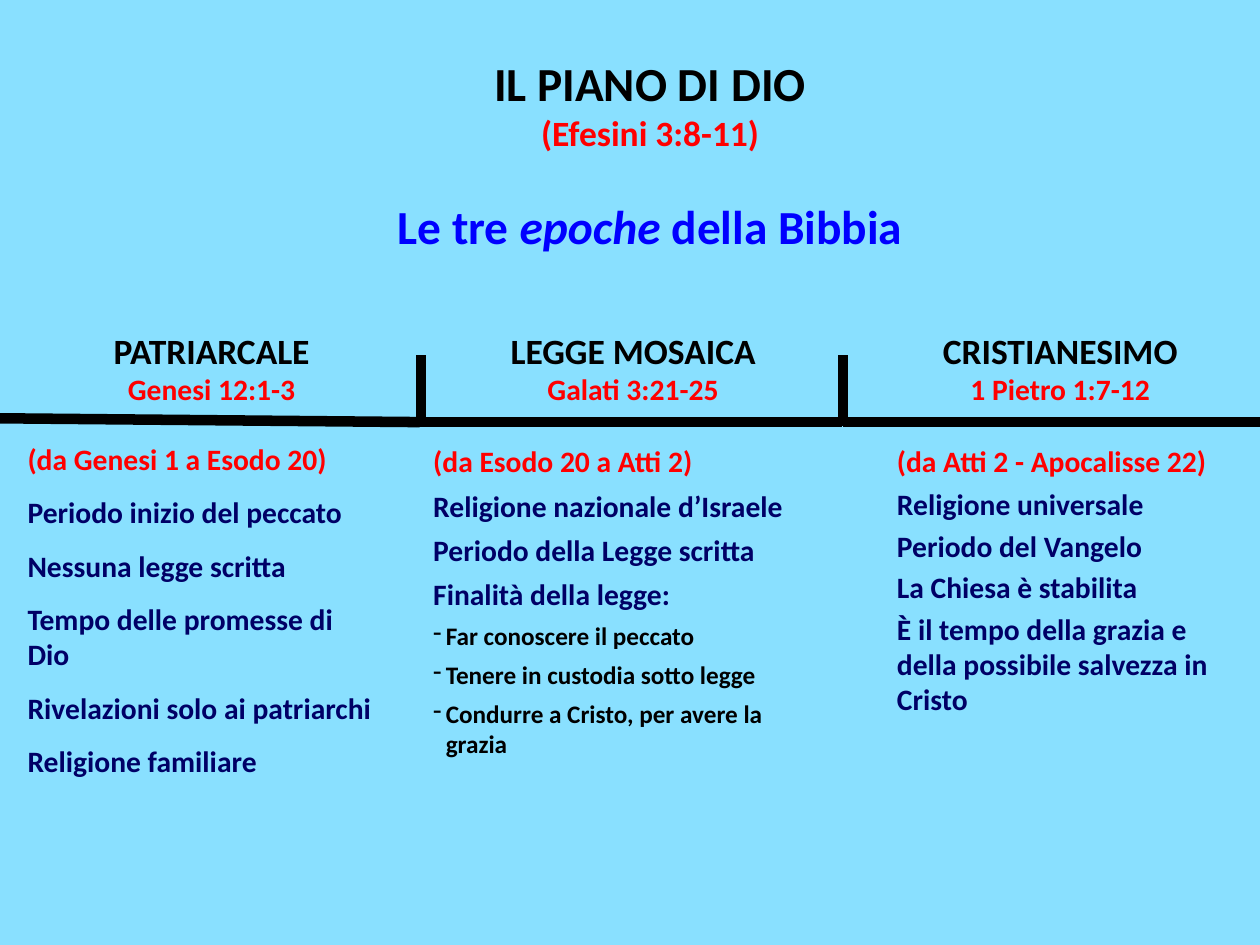
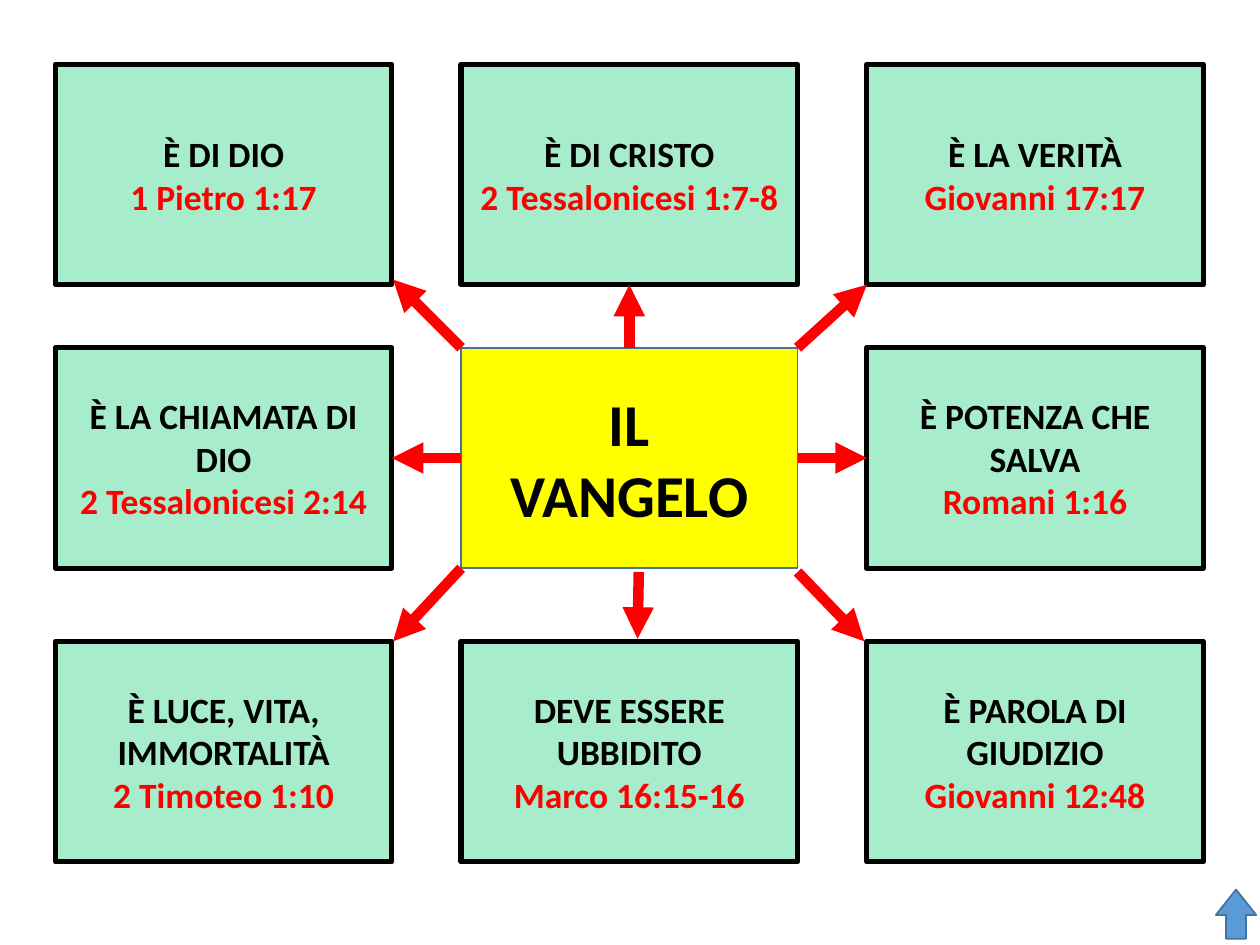
from lxml import etree
from pptx import Presentation
from pptx.dml.color import RGBColor
from pptx.enum.shapes import MSO_CONNECTOR, MSO_SHAPE
from pptx.enum.text import MSO_ANCHOR, MSO_AUTO_SIZE, PP_ALIGN
from pptx.oxml.ns import qn
from pptx.util import Inches, Pt

LEFT, CENTER = PP_ALIGN.LEFT, PP_ALIGN.CENTER
TOP, MIDDLE = MSO_ANCHOR.TOP, MSO_ANCHOR.MIDDLE
NO_FIT = MSO_AUTO_SIZE.NONE
RECTANGLE, UP_ARROW = MSO_SHAPE.RECTANGLE, MSO_SHAPE.UP_ARROW
STRAIGHT = MSO_CONNECTOR.STRAIGHT

SKY = RGBColor(0x89, 0xE0, 0xFF)
WHITE = RGBColor(0xFF, 0xFF, 0xFF)
BLACK = RGBColor(0x00, 0x00, 0x00)
RED = RGBColor(0xFF, 0x00, 0x00)
BLUE = RGBColor(0x00, 0x00, 0xFF)
NAVY = RGBColor(0x00, 0x00, 0x66)
MINT = RGBColor(0xA7, 0xED, 0xCC)
YELLOW = RGBColor(0xFF, 0xFF, 0x00)
STEEL = RGBColor(0x43, 0x73, 0x9E)
ARROW_BLUE = RGBColor(0x5B, 0x9B, 0xD5)

FONT = "Calibri"
HUGE, LARGE, MEDIUM, BODY, SMALL = 33.9, 27.1, 20.3, 16.9, 14.4
TITLE_ONLY, BLANK = 5, 6
SIDE_TOP, SIDE_LEFT, SIDE_BOTTOM, SIDE_RIGHT = range(4)


def write(frame, text, size=MEDIUM, color=BLACK, italic=False, align=LEFT,
          before=0, after=0, dash=False, same_line=False):
    """Add text as a new paragraph, or as a further run of the last one."""
    paragraph = frame.paragraphs[-1]
    if not same_line:
        if paragraph.runs:
            paragraph = frame.add_paragraph()
        paragraph.alignment = align
        paragraph.space_before, paragraph.space_after = Pt(before), Pt(after)
        if dash:
            properties = paragraph._p.get_or_add_pPr()
            properties.set("marL", str(Inches(0.1)))
            properties.set("indent", str(Inches(-0.1)))
            etree.SubElement(properties, qn("a:buChar")).set("char", "-")
    run = paragraph.add_run()
    run.text = text
    font = run.font
    font.name, font.size, font.bold, font.italic = FONT, Pt(size), True, italic
    font.color.rgb = color


class Deck:
    def __init__(self):
        self.presentation = Presentation()
        self.presentation.slide_width = Inches(10)
        self.presentation.slide_height = Inches(7.5)
        self.slide = None

    def new_slide(self, layout, background):
        self.slide = self.presentation.slides.add_slide(
            self.presentation.slide_layouts[layout])
        self.slide.background.fill.solid()
        self.slide.background.fill.fore_color.rgb = background

    def title(self, left, top, width, height):
        holder = self.slide.shapes.title
        holder.left, holder.top = Inches(left), Inches(top)
        holder.width, holder.height = Inches(width), Inches(height)
        frame = holder.text_frame
        frame.auto_size, frame.vertical_anchor = NO_FIT, TOP
        return frame

    def text_box(self, left, top, width, height, wrap=True):
        box = self.slide.shapes.add_textbox(
            Inches(left), Inches(top), Inches(width), Inches(height))
        box.text_frame.word_wrap = wrap
        return box.text_frame

    def shape(self, kind, left, top, width, height, fill, line, weight):
        shape = self.slide.shapes.add_shape(
            kind, Inches(left), Inches(top), Inches(width), Inches(height))
        shape.shadow.inherit = False
        shape.fill.solid()
        shape.fill.fore_color.rgb = fill
        shape.line.color.rgb = line
        shape.line.width = Pt(weight)
        shape.text_frame.word_wrap = True
        shape.text_frame.vertical_anchor = MIDDLE
        return shape

    def line(self, start, end, color=BLACK, arrow=False):
        connector = self.slide.shapes.add_connector(
            STRAIGHT, *(Inches(value) for value in (*start, *end)))
        connector.line.color.rgb = color
        connector.line.width = Pt(6)
        if arrow:
            outline = connector.line._get_or_add_ln()
            etree.SubElement(outline, qn("a:tailEnd")).set("type", "triangle")
        etree.SubElement(connector._element.spPr, qn("a:effectLst"))
        return connector


def build_ages(deck):
    deck.new_slide(TITLE_ONLY, SKY)
    for start, end in (((0, 3.32), (3.33, 3.35)),
                       ((3.34, 3.35), (6.68, 3.35)),
                       ((6.69, 3.35), (10, 3.35)),
                       ((3.34, 3.39), (3.34, 2.82)),
                       ((6.69, 3.38), (6.69, 2.82))):
        deck.line(start, end)

    title = deck.title(2.14, 0.38, 6.04, 1.7)
    write(title, "IL PIANO DI DIO", LARGE, align=CENTER)
    write(title, "(Efesini 3:8-11)", color=RED, align=CENTER)
    write(title, "Le tre ", LARGE, BLUE, align=CENTER, before=24.8)
    write(title, "epoche", LARGE, BLUE, italic=True, same_line=True)
    write(title, " della Bibbia", LARGE, BLUE, same_line=True)

    for left, width, age, verse in (
            (0.79, 1.78, "PATRIARCALE", "Genesi 12:1-3"),
            (3.94, 2.17, "LEGGE MOSAICA", "Galati 3:21-25"),
            (7.37, 2.09, "CRISTIANESIMO", "1 Pietro 1:7-12")):
        heading = deck.text_box(left, 2.56, width, 0.73, wrap=False)
        write(heading, age, align=CENTER)
        write(heading, verse, BODY, RED, align=CENTER)

    # Place, range of books, its spacing, features, their spacing, purposes
    ages = (
        ((0.12, 3.45, 2.99, 2.8), "(da Genesi 1 a Esodo 20)", 5.1,
         ("Periodo inizio del peccato", "Nessuna legge scritta",
          "Tempo delle promesse di Dio", "Rivelazioni solo ai patriarchi",
          "Religione familiare"), 5.1, ()),
        ((3.34, 3.47, 3.33, 2.71), "(da Esodo 20 a Atti 2)", 2.5,
         ("Religione nazionale d’Israele", "Periodo della Legge scritta",
          "Finalità della legge:"), 2.5,
         ("Far conoscere il peccato", "Tenere in custodia sotto legge",
          "Condurre a Cristo, per avere la grazia")),
        ((7.02, 3.47, 2.72, 2.33), "(da Atti 2 - Apocalisse 22)", 2.5,
         ("Religione universale", "Periodo del Vangelo",
          "La Chiesa è stabilita",
          "È il tempo della grazia e della possibile salvezza in Cristo"),
         1.7, ()),
    )
    for place, books, books_gap, features, gap, purposes in ages:
        column = deck.text_box(*place)
        write(column, books, BODY, RED, before=books_gap, after=books_gap)
        for feature in features:
            write(column, feature, BODY, NAVY, before=gap, after=gap)
        for purpose in purposes:
            write(column, purpose, SMALL, before=gap, after=gap, dash=True)


def build_gospel(deck):
    deck.new_slide(BLANK, WHITE)
    columns, rows = (0.44, 3.66, 6.88), (0.51, 2.76, 5.09)
    width, height = 2.67, 1.75

    gospel = deck.shape(RECTANGLE, columns[1], rows[1], width, height,
                        YELLOW, STEEL, 1)
    for word in ("IL", "VANGELO"):
        write(gospel.text_frame, word, HUGE, align=CENTER)

    statements = {
        (0, 0): ("È DI DIO", "1 Pietro 1:17"),
        (0, 1): ("È DI CRISTO", "2 Tessalonicesi 1:7-8"),
        (0, 2): ("È LA VERITÀ", "Giovanni 17:17"),
        (1, 0): ("È LA CHIAMATA DI DIO", "2 Tessalonicesi 2:14"),
        (1, 2): ("È POTENZA CHE SALVA", "Romani 1:16"),
        (2, 0): ("È LUCE, VITA, IMMORTALITÀ", "2 Timoteo 1:10"),
        (2, 1): ("DEVE ESSERE UBBIDITO", "Marco 16:15-16"),
        (2, 2): ("È PAROLA DI GIUDIZIO", "Giovanni 12:48"),
    }
    cards = {}
    for (row, column), (statement, verse) in statements.items():
        card = deck.shape(RECTANGLE, columns[column], rows[row], width, height,
                          MINT, BLACK, 3)
        write(card.text_frame, statement, align=CENTER)
        write(card.text_frame, verse, color=RED, align=CENTER)
        cards[row, column] = card

    for start, end, cell, gospel_side, card_side in (
            ((4.99, 2.76), (4.99, 2.26), (0, 1), SIDE_TOP, SIDE_BOTTOM),
            ((3.66, 3.64), (3.11, 3.64), (1, 0), SIDE_LEFT, SIDE_RIGHT),
            ((6.33, 3.64), (6.88, 3.64), (1, 2), SIDE_RIGHT, SIDE_LEFT)):
        arrow = deck.line(start, end, RED, arrow=True)
        arrow.begin_connect(gospel, gospel_side)
        arrow.end_connect(cards[cell], card_side)

    for start, end in (((6.33, 2.76), (6.88, 2.26)),
                       ((3.66, 2.76), (3.12, 2.22)),
                       ((6.33, 4.54), (6.86, 5.09)),
                       ((5.07, 4.54), (5.06, 5.07)),
                       ((3.66, 4.51), (3.12, 5.09))):
        deck.line(start, end, RED, arrow=True)

    up_arrow = deck.shape(UP_ARROW, 9.65, 7.06, 0.32, 0.39,
                          ARROW_BLUE, STEEL, 1)
    up_arrow.adjustments[0] = 0.5
    up_arrow.adjustments[1] = 0.63


def main():
    deck = Deck()
    build_ages(deck)
    build_gospel(deck)
    deck.presentation.save("out.pptx")


if __name__ == "__main__":
    main()
